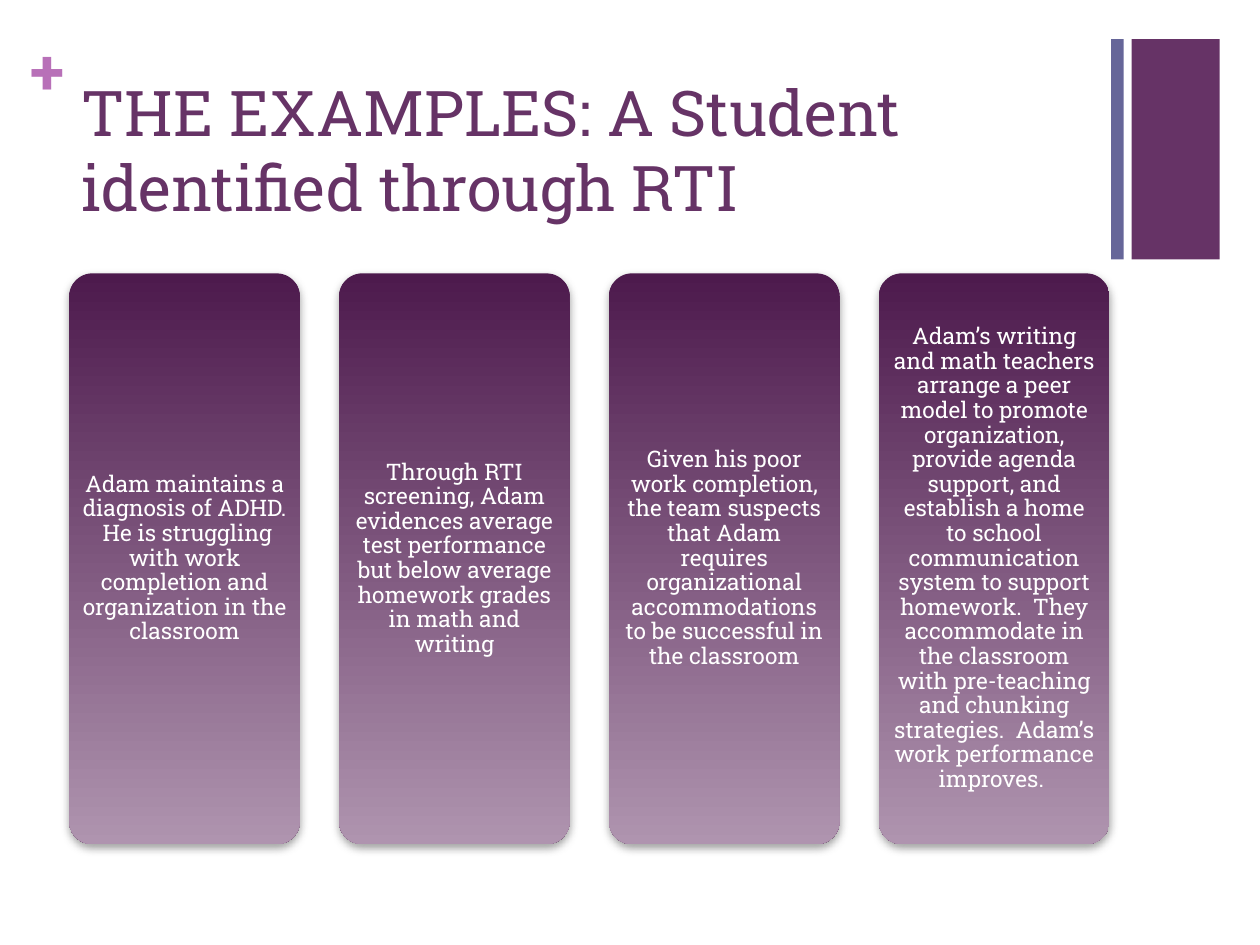
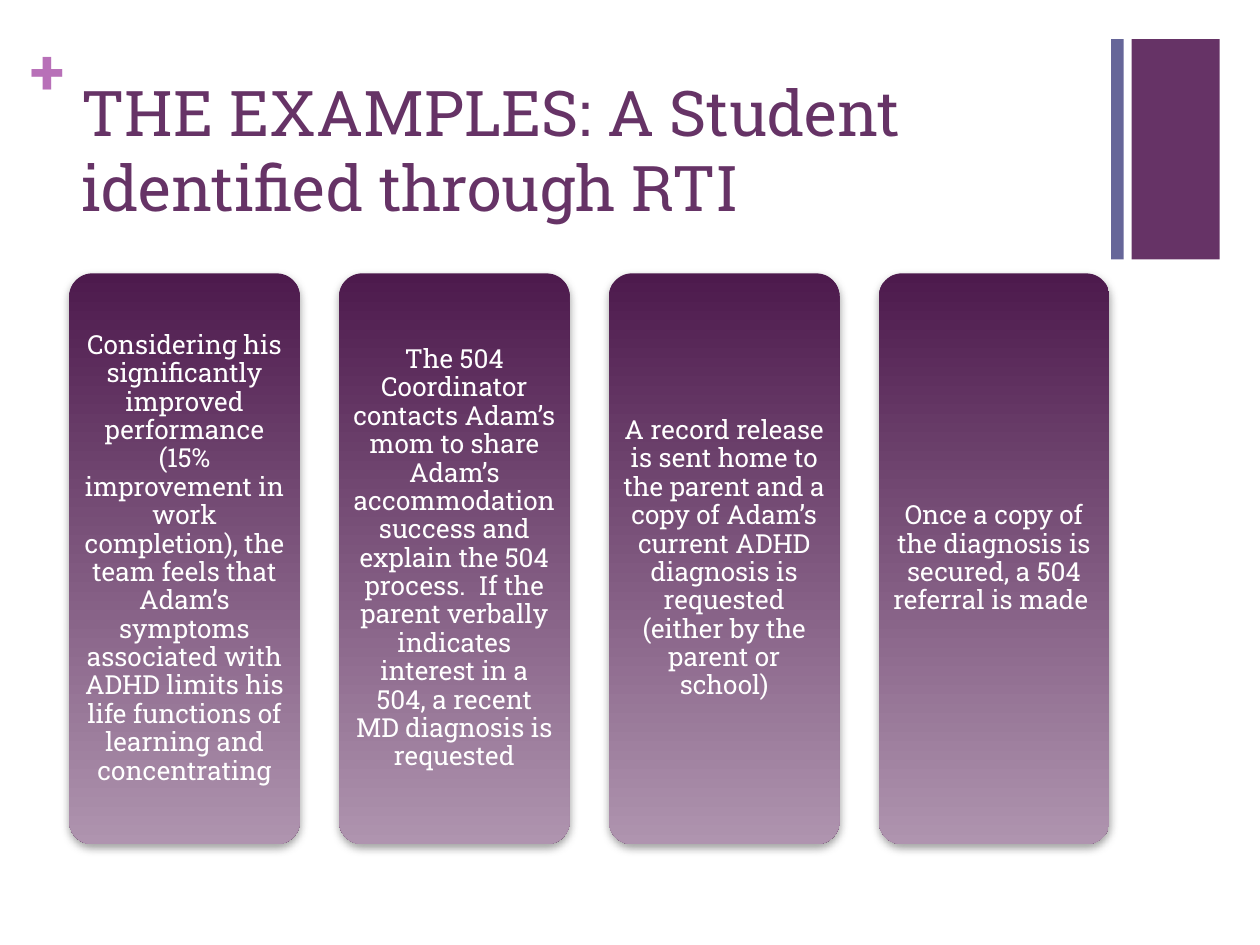
from dataclasses import dataclass

from lxml import etree
from pptx import Presentation
from pptx.dml.color import RGBColor
from pptx.enum import shapes, text
from pptx.oxml import ns
from pptx.util import Pt


@dataclass(frozen=True)
class Theme:
    font: str = "Roboto Slab"
    plum: str = "663366"
    slate: str = "666699"
    orchid: str = "B870B8"
    card_top: str = "4D1A4D"
    card_bottom: str = "AF94AF"
    shadow: str = "808080"
    white: str = "FFFFFF"
    title_size: int = 36


THEME = Theme()

# Card grid, in points
CARD_LEFT, CARD_TOP = 39.6, 156.24
CARD_WIDTH, CARD_HEIGHT = 131.76, 326.16
CARD_PITCH = 154.2

TITLE = "THE EXAMPLES: A Student identified through RTI"

# Each slide: text size, card inset, card texts
SLIDES = [
    (13, 3.6, [
        "Adam maintains a diagnosis of ADHD.  He is struggling with work "
        "completion and organization in the classroom",
        "Through RTI screening, Adam evidences average test performance but "
        "below average homework grades in math and writing",
        "Given his poor work completion, the team suspects that Adam requires "
        "organizational accommodations to be successful in the classroom",
        "Adam’s writing and math teachers arrange a peer model to promote "
        "organization, provide agenda support, and establish a home to school "
        "communication system to support homework.  They accommodate in the "
        "classroom with pre-teaching and chunking strategies.  Adam’s work "
        "performance improves. ",
    ]),
    (15, 4.2, [
        "Considering his significantly improved performance (15% improvement "
        "in work completion), the team feels that Adam’s symptoms associated "
        "with ADHD limits his life functions of learning and concentrating",
        "The 504 Coordinator contacts Adam’s mom to share Adam’s accommodation "
        "success and explain the 504 process.  If the parent verbally indicates "
        "interest in a 504, a recent MD diagnosis is requested",
        "A record release is sent home to the parent and a copy of Adam’s "
        "current ADHD diagnosis is requested (either by the parent or school)",
        "Once a copy of the diagnosis is secured, a 504 referral is made ",
    ]),
]


def rgb(value):
    return RGBColor.from_string(value)


def set_insets(tf, x, y):
    tf.margin_left = tf.margin_right = Pt(x)
    tf.margin_top = tf.margin_bottom = Pt(y)


def add_run(p, content, size, color, bold=False):
    r = p.add_run()
    r.text = content
    r.font.name = THEME.font
    r.font.size = Pt(size)
    r.font.bold = bold
    r.font.color.rgb = rgb(color)


def add_band(slide, left, width, color):
    sp = slide.shapes.add_shape(shapes.MSO_SHAPE.RECTANGLE,
                                Pt(left), Pt(22.3), Pt(width), Pt(126))
    sp.shadow.inherit = False
    sp.fill.solid()
    sp.fill.fore_color.rgb = rgb(color)
    sp.line.fill.background()


def add_label(slide, box, content, color, insets=(7.2, 3.6), bold=False):
    sp = slide.shapes.add_textbox(*map(Pt, box))
    tf = sp.text_frame
    tf.word_wrap = True
    set_insets(tf, *insets)
    add_run(tf.paragraphs[0], content, THEME.title_size, color, bold)


def add_soft_shadow(sp):
    sp.shadow.inherit = False
    effects = sp._element.spPr.find(ns.qn("a:effectLst"))
    shadow = etree.SubElement(effects, ns.qn("a:outerShdw"), blurRad=str(Pt(5)),
                              dist=str(Pt(2)), dir="5400000", rotWithShape="0")
    color = etree.SubElement(shadow, ns.qn("a:srgbClr"), val=THEME.shadow)
    etree.SubElement(color, ns.qn("a:alpha"), val="75000")


def add_card(slide, column, content, size, inset):
    sp = slide.shapes.add_shape(shapes.MSO_SHAPE.ROUNDED_RECTANGLE,
                                Pt(CARD_LEFT + column * CARD_PITCH), Pt(CARD_TOP),
                                Pt(CARD_WIDTH), Pt(CARD_HEIGHT))
    sp.adjustments[0] = 0.1
    sp.line.fill.background()
    sp.fill.gradient()
    sp.fill.gradient_angle = 270  # counter-clockwise: top to bottom
    stops = zip(sp.fill.gradient_stops, (THEME.card_top, THEME.card_bottom))
    for position, (stop, color) in enumerate(stops):
        stop.position = position
        stop.color.rgb = rgb(color)
    add_soft_shadow(sp)

    tf = sp.text_frame
    tf.word_wrap = True
    tf.vertical_anchor = text.MSO_ANCHOR.MIDDLE
    set_insets(tf, inset, inset)
    p = tf.paragraphs[0]
    p.alignment = text.PP_ALIGN.CENTER
    p.line_spacing = 0.9
    add_run(p, content, size, THEME.white)


def add_frame(slide):
    """Bands, plus sign and title shared by every slide."""
    add_band(slide, 646.6, 50.4, THEME.plum)
    add_label(slide, (17.3, 18, 20.9, 43.9), "+", THEME.orchid, (0, 0), bold=True)
    add_band(slide, 635, 7.2, THEME.slate)
    add_label(slide, (39.6, 38.2, 594.7, 87.8), TITLE, THEME.plum)


def main():
    prs = Presentation()
    prs.slide_width, prs.slide_height = Pt(720), Pt(540)
    for size, inset, cards in SLIDES:
        slide = prs.slides.add_slide(prs.slide_layouts[6])
        add_frame(slide)
        for column, content in enumerate(cards):
            add_card(slide, column, content, size, inset)
    prs.save("out.pptx")


if __name__ == "__main__":
    main()
